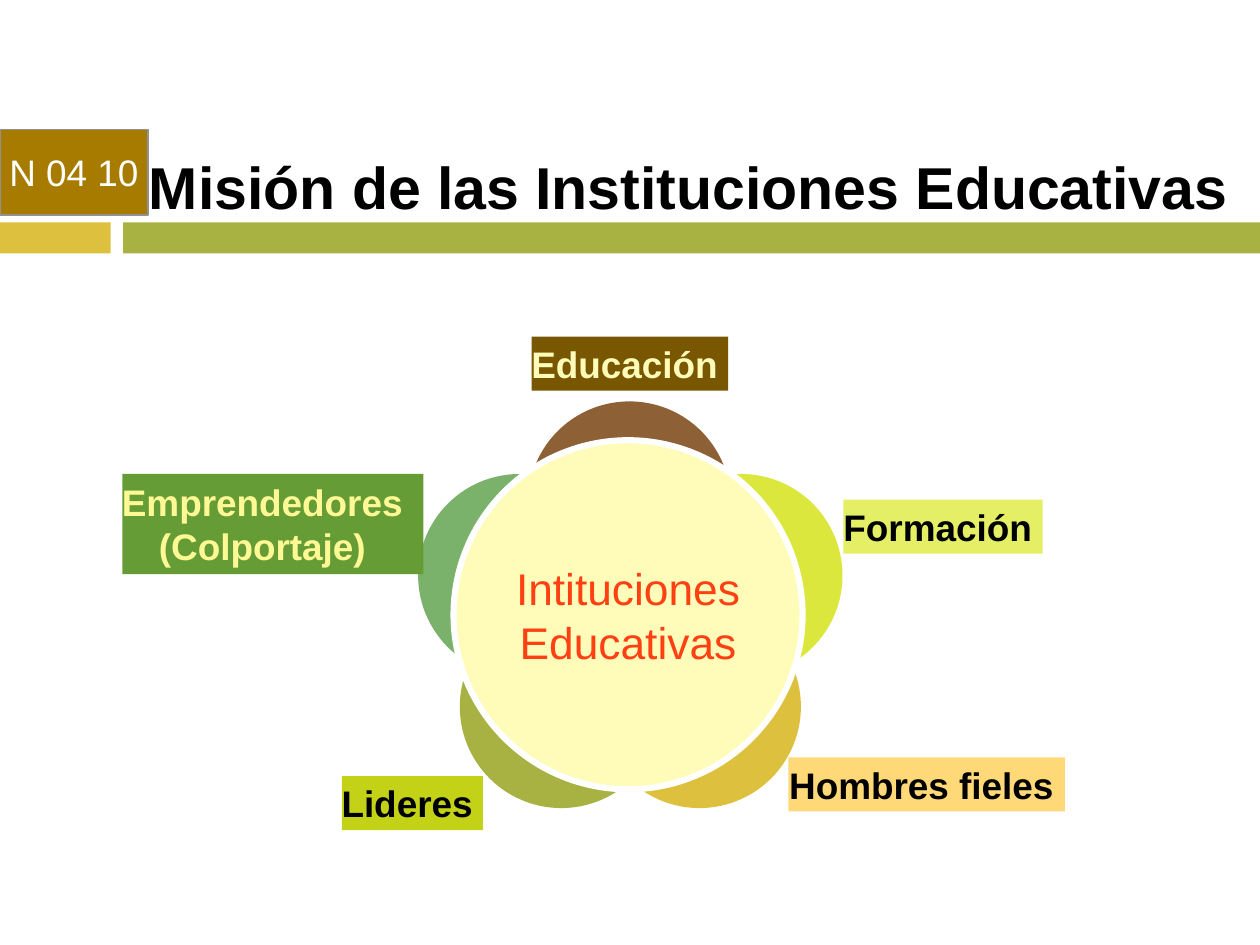
"""Build the slide on the mission of educational institutions."""
from dataclasses import dataclass

from pptx import Presentation
from pptx.dml.color import RGBColor
from pptx.enum import shapes, text
from pptx.util import Pt


@dataclass(frozen=True)
class Theme:
    font: str = "Arial"
    title_size: int = 48
    hub_size: int = 36
    label_size: int = 30
    black: str = "000000"
    white: str = "FFFFFF"
    olive: str = "A7B242"
    gold: str = "DDC13E"
    green: str = "7AB26C"
    lime: str = "DCE73D"
    brown: str = "8E6035"
    cream: str = "FFFBB9"
    red: str = "FF4013"
    badge: str = "A77B00"
    badge_edge: str = "929292"
    forest: str = "669C35"
    pale_yellow: str = "FFF995"
    pale_lime: str = "E4EF65"
    bright_lime: str = "C3D117"
    umber: str = "785700"
    apricot: str = "FFD877"


THEME = Theme()
RECT = shapes.MSO_SHAPE.RECTANGLE
OVAL = shapes.MSO_SHAPE.OVAL
PETAL_DIAMETER = 164.9
LABEL_HEIGHT = 43.9
LABEL_GAP = 8.5

PETALS = [
    (339.8, 385.2, THEME.green),
    (519.8, 385.2, THEME.lime),
    (373.7, 491.8, THEME.olive),
    (486, 491.8, THEME.gold),
    (429.1, 326.2, THEME.brown),
]

LABELS = [
    ("Formación", 685.4, 406.1, 162, THEME.pale_lime, THEME.black),
    ("Lideres", 277.9, 630.7, 114.5, THEME.bright_lime, THEME.black),
    ("Educación", 432, 273.6, 159.8, THEME.umber, THEME.cream),
    ("Emprendedores\n(Colportaje)", 99.4, 385.2, 244.8, THEME.forest, THEME.pale_yellow),
    ("Hombres fieles", 640.8, 615.6, 224.6, THEME.apricot, THEME.black),
]


def add_block(slide, kind, left, top, width, height, fill, edge=None, edge_width=1):
    """Add a flat preset shape, outlined only when an edge colour is given."""
    block = slide.shapes.add_shape(kind, Pt(left), Pt(top), Pt(width), Pt(height))
    block.shadow.inherit = False
    block.fill.solid()
    block.fill.fore_color.rgb = RGBColor.from_string(fill)
    if edge:
        block.line.color.rgb = RGBColor.from_string(edge)
        block.line.width = Pt(edge_width)
    else:
        block.line.fill.background()
    return block


def write(holder, wording, size, colour, bold=False, wrap=True, right=0,
          align=text.PP_ALIGN.CENTER, anchor=text.MSO_ANCHOR.MIDDLE):
    """Fill a shape with text in one style."""
    frame = holder.text_frame
    frame.text = wording
    frame.word_wrap = wrap
    frame.vertical_anchor = anchor
    frame.margin_left = frame.margin_top = frame.margin_bottom = 0
    frame.margin_right = Pt(right)
    for paragraph in frame.paragraphs:
        paragraph.alignment = align
        for run in paragraph.runs:
            run.font.name = THEME.font
            run.font.size = Pt(size)
            run.font.bold = bold
            run.font.color.rgb = RGBColor.from_string(colour)


def add_title(slide, wording):
    """Add the heading that stands on the bar."""
    title = slide.shapes.add_textbox(Pt(121), Pt(99.4), Pt(895.7), Pt(80.6))
    write(title, wording, THEME.title_size, THEME.black, bold=True,
          align=text.PP_ALIGN.LEFT, anchor=text.MSO_ANCHOR.BOTTOM)


def add_label(slide, wording, left, top, width, fill, colour):
    """Add the name of a petal, with a gap at the right of its text."""
    lines = wording.count("\n") + 1
    height = LABEL_HEIGHT + (lines - 1) * 37.5
    label = add_block(slide, RECT, left, top, width, height, fill)
    write(label, wording, THEME.label_size, colour, bold=True, wrap=False,
          right=LABEL_GAP * lines)


def add_hub(slide, wording):
    """Add the central disc over the petals."""
    hub = add_block(slide, OVAL, 368.6, 357.8, 283.7, 283.7, THEME.cream, THEME.white, 5)
    write(hub, wording, THEME.hub_size, THEME.red)


def add_badge(slide, wording):
    """Add the code box at the left of the title."""
    badge = add_block(slide, RECT, 0, 105.1, 120.2, 69.8, THEME.badge,
                      THEME.badge_edge, 1.25)
    write(badge, wording, THEME.label_size, THEME.white)


def main():
    """Compose the slide and save it."""
    deck = Presentation()
    deck.slide_width, deck.slide_height = Pt(1024), Pt(768)
    slide = deck.slides.add_slide(deck.slide_layouts[6])
    add_block(slide, RECT, 100, 180.7, 924, 25.2, THEME.olive)
    add_block(slide, RECT, 0, 180.7, 90, 25.2, THEME.gold)
    for left, top, fill in PETALS:
        add_block(slide, OVAL, left, top, PETAL_DIAMETER, PETAL_DIAMETER, fill)
    add_title(slide, "Misión de las Instituciones Educativas")
    for label in LABELS:
        add_label(slide, *label)
    add_hub(slide, "Intituciones Educativas")
    add_badge(slide, "N 04 10")
    deck.save("out.pptx")


if __name__ == "__main__":
    main()
